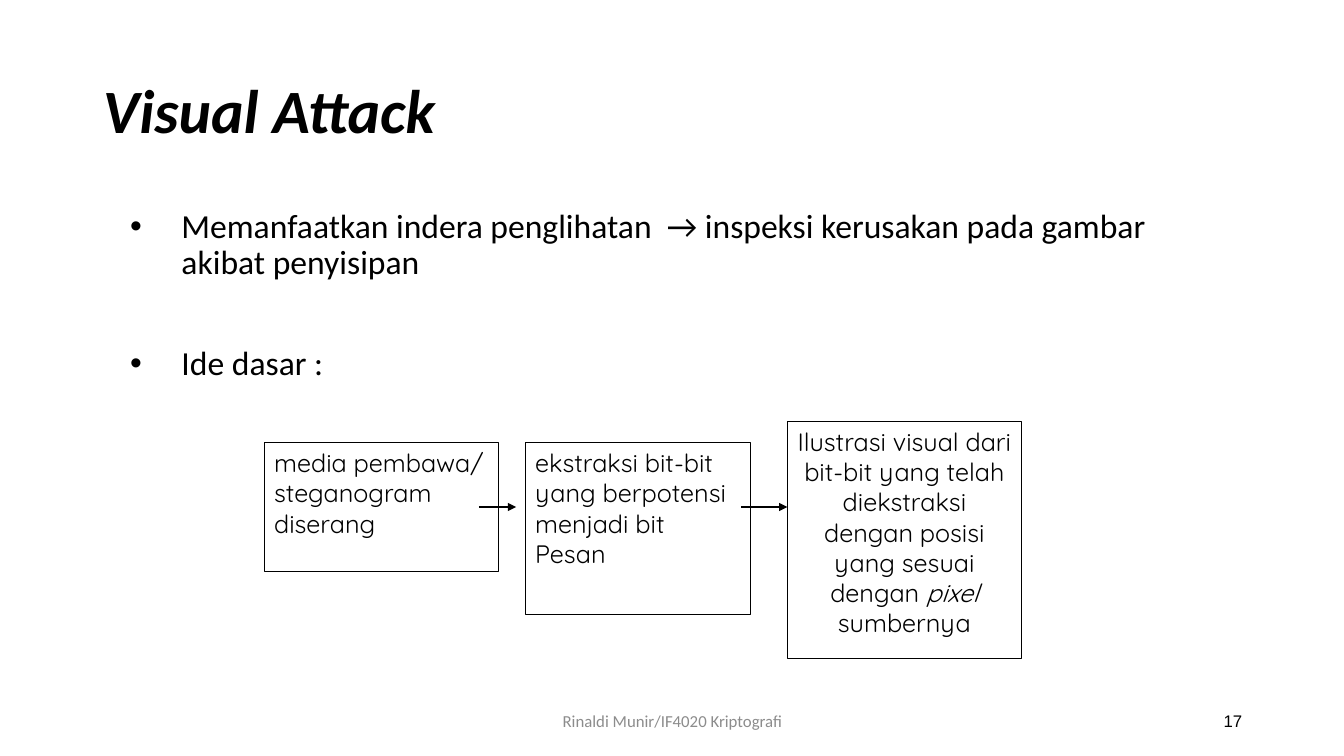
import pptx
import pptx.util
import pptx.dml.color
import pptx.enum.text
import pptx.enum.shapes
import pptx.oxml
from dataclasses import dataclass

Inches = pptx.util.Inches
Pt = pptx.util.Pt
Align = pptx.enum.text.PP_ALIGN
Anchor = pptx.enum.text.MSO_ANCHOR


@dataclass
class Theme:
    ink: str = "000000"
    paper: str = "FFFFFF"
    gray: str = "8C8C8C"
    main: str = "Calibri"
    flow: str = "Quicksand"
    plain: str = "Arial"
    title: int = 44
    body: int = 24
    step: int = 18
    foot: int = 12
    line: float = 0.75


theme = Theme()

TITLE = "Visual Attack"
POINTS = [
    ("Memanfaatkan indera penglihatan  → inspeksi kerusakan pada gambar akibat penyisipan", 0),
    ("Ide dasar :", 46),
]
STEPS = [
    ((2.62, 4.39, 2.32, 1.28), Align.LEFT, [("media pembawa/ steganogram diserang", False)]),
    ((5.21, 4.39, 2.23, 1.71), Align.LEFT,
     [("ekstraksi bit-bit yang berpotensi menjadi bit Pesan", False)]),
    ((7.81, 4.18, 2.32, 2.35), Align.CENTER,
     [("Ilustrasi visual dari bit-bit yang telah diekstraksi dengan posisi yang sesuai dengan ", False),
      ("pixel", True), (" sumbernya", False)]),
]
ARROWS = [(4.75, 5.12), (7.35, 7.81)]
ARROW_Y = 5.03
NOTES = [
    ((4.42, 6.95, 4.5, 0.4), Align.CENTER, "Rinaldi Munir/IF4020 Kriptografi", theme.main, theme.gray),
    ((9.42, 6.95, 3, 0.4), Align.RIGHT, "17", theme.plain, theme.ink),
]
NS = 'xmlns:a="http://schemas.openxmlformats.org/drawingml/2006/main"'


def color(code):
    return pptx.dml.color.RGBColor.from_string(code)


def place(shape, box):
    shape.left, shape.top, shape.width, shape.height = map(Inches, box)


def write(para, text, face, size, ink=theme.ink, bold=False, slant=False):
    run = para.add_run()
    run.text = text
    font = run.font
    font.name, font.size, font.bold, font.italic = face, Pt(size), bold, slant
    font.color.rgb = color(ink)


def stroke(line):
    line.color.rgb = color(theme.ink)
    line.width = Pt(theme.line)


def add_title(slide):
    shape = slide.shapes.title
    place(shape, (0.92, 0.4, 11.5, 1.45))
    shape.text_frame.vertical_anchor = Anchor.MIDDLE
    para = shape.text_frame.paragraphs[0]
    para.alignment = Align.LEFT
    para.line_spacing = 0.9
    write(para, TITLE, theme.main, theme.title, bold=True, slant=True)


def add_points(slide):
    shape = slide.placeholders[1]
    place(shape, (1.19, 2.03, 11.12, 4.7))
    frame = shape.text_frame
    for i, (text, gap) in enumerate(POINTS):
        para = frame.add_paragraph() if i else frame.paragraphs[0]
        props = para._p.get_or_add_pPr()
        props.set("marL", str(Inches(0.51)))
        props.set("indent", str(-Inches(0.51)))
        props.append(pptx.oxml.parse_xml(f'<a:buChar {NS} char="•"/>'))
        para.line_spacing = 0.9
        para.space_before = Pt(gap)
        write(para, text, theme.main, theme.body)


def add_step(slide, box, align, runs):
    shape = slide.shapes.add_shape(pptx.enum.shapes.MSO_SHAPE.RECTANGLE, *map(Inches, box))
    shape.shadow.inherit = False
    shape.fill.solid()
    shape.fill.fore_color.rgb = color(theme.paper)
    stroke(shape.line)
    frame = shape.text_frame
    frame.word_wrap = True
    frame.vertical_anchor = Anchor.TOP
    para = frame.paragraphs[0]
    para.alignment = align
    for text, slant in runs:
        write(para, text, theme.flow, theme.step, slant=slant)


def add_arrow(slide, start, end):
    kind = pptx.enum.shapes.MSO_CONNECTOR.STRAIGHT
    arrow = slide.shapes.add_connector(
        kind, Inches(start), Inches(ARROW_Y), Inches(end), Inches(ARROW_Y))
    stroke(arrow.line)
    arrow.line._get_or_add_ln().append(
        pptx.oxml.parse_xml(f'<a:tailEnd {NS} type="triangle"/>'))
    arrow._element.spPr.append(pptx.oxml.parse_xml(f'<a:effectLst {NS}/>'))


def add_note(slide, box, align, text, face, ink):
    frame = slide.shapes.add_textbox(*map(Inches, box)).text_frame
    frame.word_wrap = True
    frame.vertical_anchor = Anchor.MIDDLE
    para = frame.paragraphs[0]
    para.alignment = align
    write(para, text, face, theme.foot, ink)


def main():
    deck = pptx.Presentation()
    deck.slide_width, deck.slide_height = Inches(13.33), Inches(7.5)
    slide = deck.slides.add_slide(deck.slide_layouts[1])
    add_title(slide)
    add_points(slide)
    for step in STEPS:
        add_step(slide, *step)
    for arrow in ARROWS:
        add_arrow(slide, *arrow)
    for note in NOTES:
        add_note(slide, *note)
    deck.save("out.pptx")


if __name__ == "__main__":
    main()
